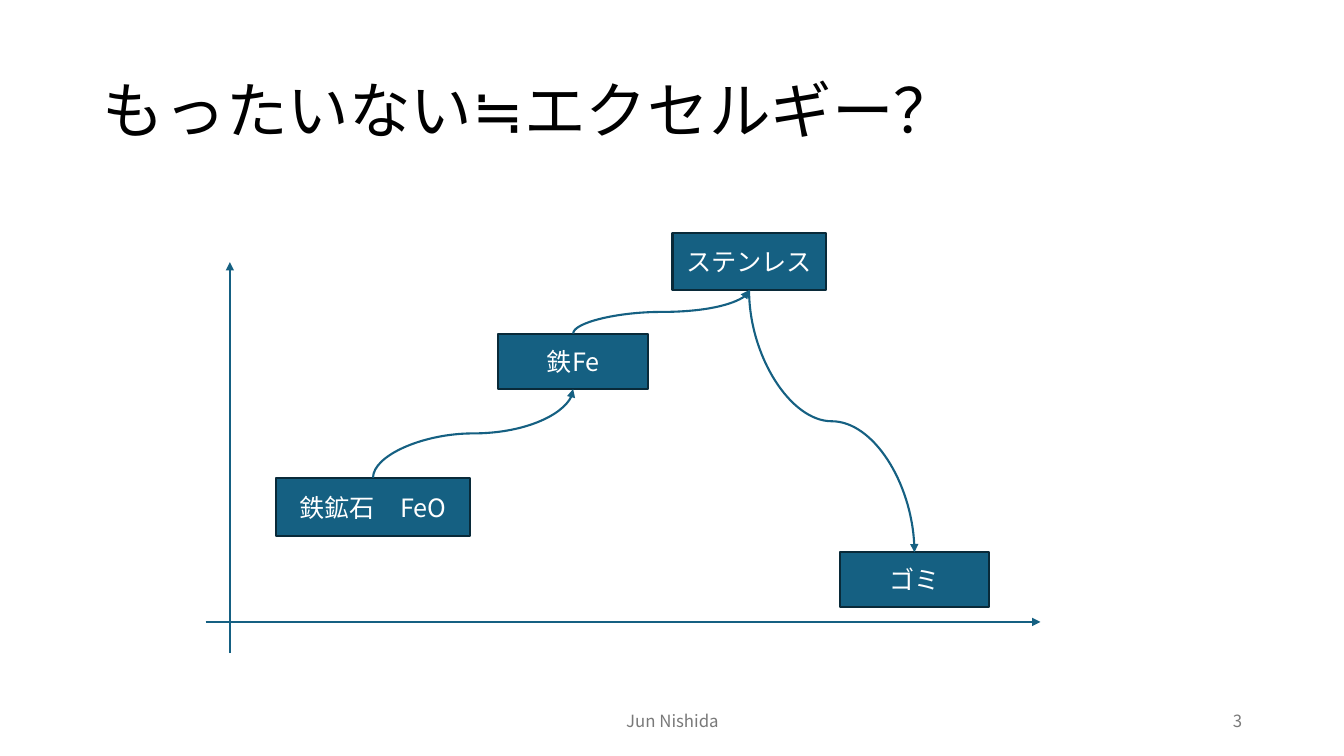
from lxml import etree
from pptx import Presentation
from pptx import util as u
from pptx.dml.color import RGBColor
from pptx.enum import shapes, text
from pptx.oxml import ns

TOP, BOTTOM = 0, 2


def color(value):
    return RGBColor.from_string(value)


class SlideBuilder:
    font = "Noto Sans CJK JP"
    accent = "156082"
    outline = "092A39"
    line_width = 1.5

    def __init__(self, slide):
        self.slide = slide

    def set_text(self, shape, content, size, ink, align):
        frame = shape.text_frame
        frame.text = content
        frame.word_wrap = True
        frame.auto_size = text.MSO_AUTO_SIZE.NONE
        frame.vertical_anchor = text.MSO_ANCHOR.MIDDLE
        para = frame.paragraphs[0]
        para.alignment = align
        span = para.runs[0]
        span.font.size = u.Pt(size)
        span.font.name = self.font
        span.font.color.rgb = color(ink)
        east_asian = etree.SubElement(span.font._element, ns.qn("a:ea"))
        east_asian.set("typeface", self.font)
        return para

    def title(self, content, left, top, width, height):
        title = self.slide.shapes.title
        title.left, title.top = u.Inches(left), u.Inches(top)
        title.width, title.height = u.Inches(width), u.Inches(height)
        para = self.set_text(title, content, 44, "000000", text.PP_ALIGN.LEFT)
        para.line_spacing = 0.9

    def footer(self, content, left, width, align):
        box = self.slide.shapes.add_textbox(
            u.Inches(left), u.Inches(6.95), u.Inches(width), u.Inches(0.4))
        self.set_text(box, content, 12, "797979", align)

    def box(self, content, left, top, width, height):
        box = self.slide.shapes.add_shape(
            shapes.MSO_SHAPE.RECTANGLE, u.Inches(left), u.Inches(top),
            u.Inches(width), u.Inches(height))
        box.shadow.inherit = False
        box.fill.solid()
        box.fill.fore_color.rgb = color(self.accent)
        box.line.color.rgb = color(self.outline)
        box.line.width = u.Pt(self.line_width)
        self.set_text(box, content, 18, "FFFFFF", text.PP_ALIGN.CENTER)
        return box

    def arrow(self, kind, x1, y1, x2, y2):
        arrow = self.slide.shapes.add_connector(
            kind, u.Inches(x1), u.Inches(y1), u.Inches(x2), u.Inches(y2))
        arrow.line.color.rgb = color(self.accent)
        arrow.line.width = u.Pt(self.line_width)
        outline = arrow._element.spPr.find(ns.qn("a:ln"))
        etree.SubElement(outline, ns.qn("a:tailEnd")).set("type", "triangle")
        etree.SubElement(arrow._element.spPr, ns.qn("a:effectLst"))
        return arrow

    def axis(self, x1, y1, x2, y2):
        self.arrow(shapes.MSO_CONNECTOR.STRAIGHT, x1, y1, x2, y2)

    def curve(self, source, source_site, target, target_site):
        curve = self.arrow(shapes.MSO_CONNECTOR.CURVE, 0, 0, 1, 1)
        curve.begin_connect(source, source_site)
        curve.end_connect(target, target_site)
        rising = curve.end_y < curve.begin_y
        center_x = (curve.begin_x + curve.end_x) // 2
        center_y = (curve.begin_y + curve.end_y) // 2
        width = abs(curve.end_y - curve.begin_y)
        height = abs(curve.end_x - curve.begin_x)
        curve.left, curve.top = center_x - width // 2, center_y - height // 2
        curve.width, curve.height = width, height
        transform = curve._element.spPr.find(ns.qn("a:xfrm"))
        transform.set("rot", str((90 if rising else 270) * 60000))
        transform.set("flipH", "1")
        transform.set("flipV", "1" if rising else "0")


def main():
    deck = Presentation()
    deck.slide_width, deck.slide_height = u.Inches(13.33), u.Inches(7.5)
    page = SlideBuilder(deck.slides.add_slide(deck.slide_layouts[5]))

    page.title("もったいない≒エクセルギー？", 0.92, 0.4, 11.5, 1.45)
    page.axis(2.28, 6.48, 2.28, 2.6)
    page.axis(2.04, 6.17, 10.32, 6.17)

    ore = page.box("鉄鉱石　FeO", 2.74, 4.74, 1.92, 0.58)
    iron = page.box("鉄Fe", 4.94, 3.31, 1.49, 0.55)
    stainless = page.box("ステンレス", 6.67, 2.31, 1.52, 0.57)
    waste = page.box("ゴミ", 8.33, 5.48, 1.48, 0.54)

    page.curve(ore, TOP, iron, BOTTOM)
    page.curve(iron, TOP, stainless, BOTTOM)
    page.curve(stainless, BOTTOM, waste, TOP)

    page.footer("Jun Nishida", 4.42, 4.5, text.PP_ALIGN.CENTER)
    page.footer("3", 9.42, 3, text.PP_ALIGN.RIGHT)
    deck.save("out.pptx")


if __name__ == "__main__":
    main()
